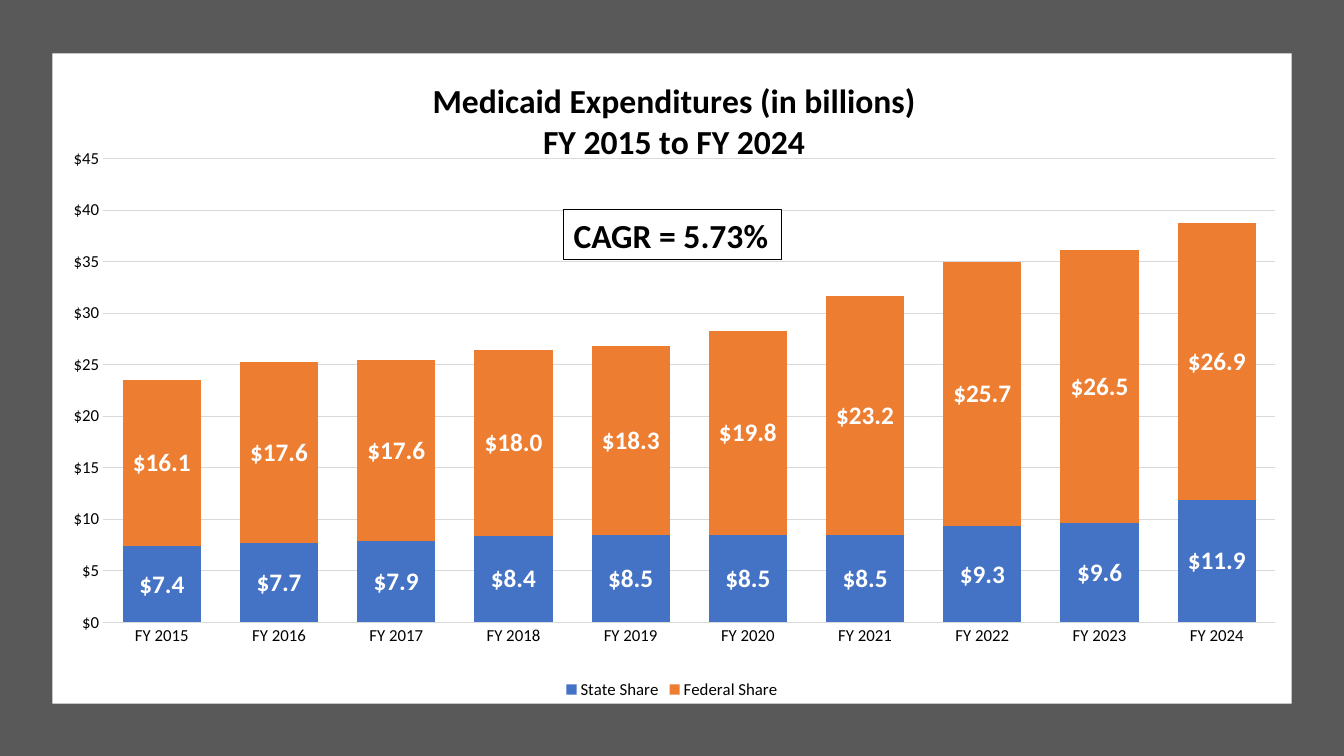
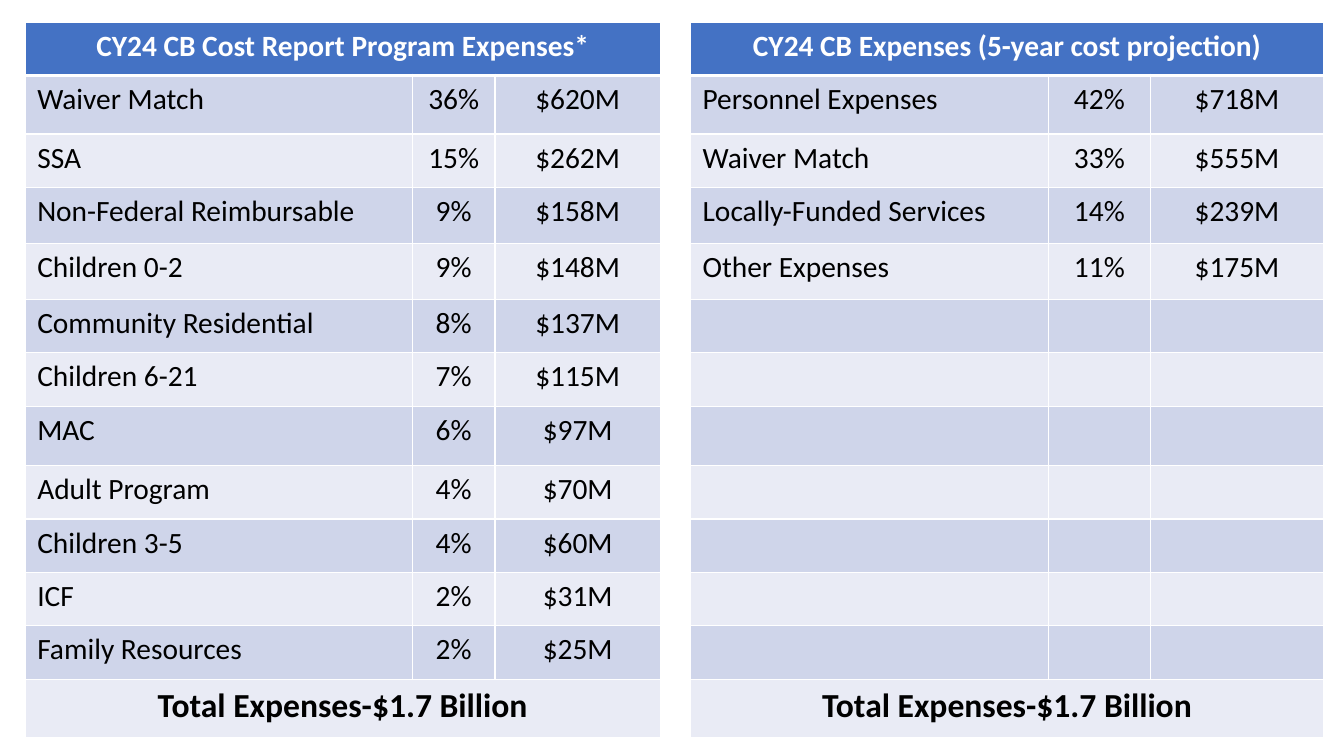
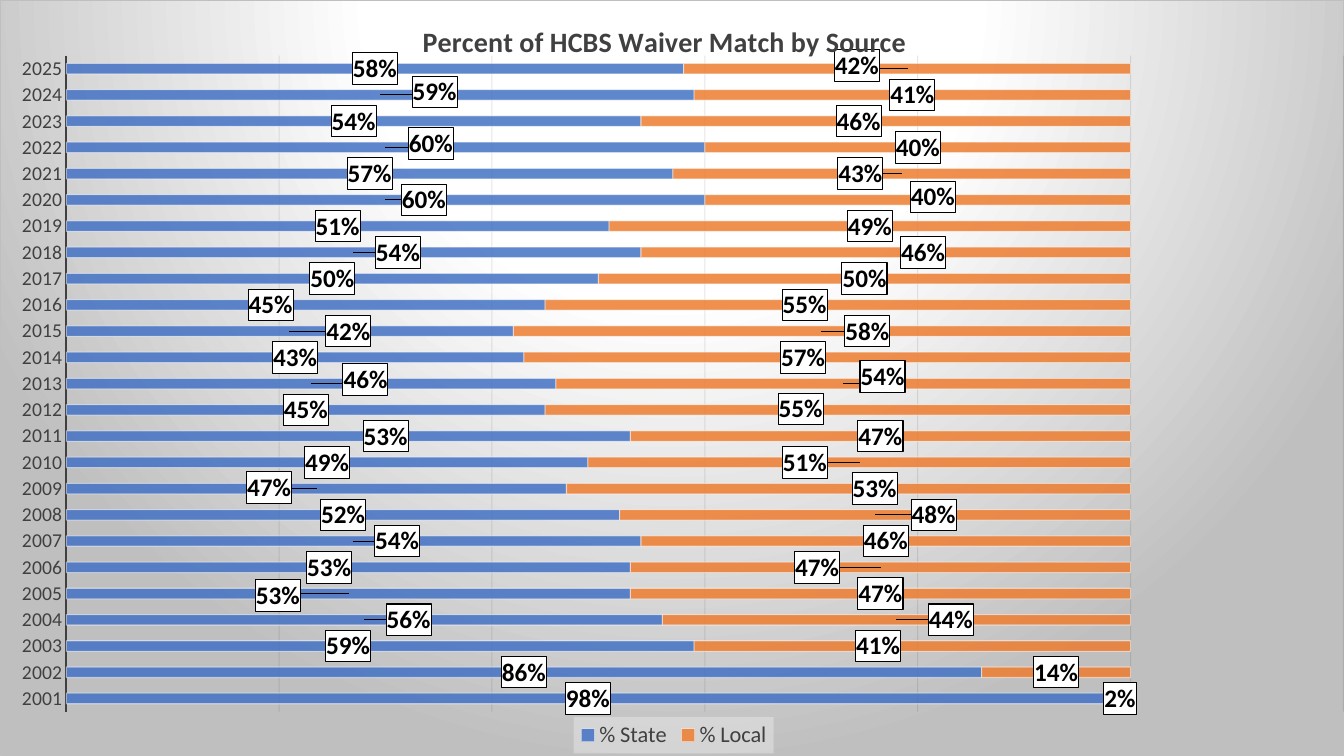
from copy import deepcopy
from itertools import zip_longest

from lxml import etree
from pptx import Presentation
from pptx import util as u
from pptx.chart.data import CategoryChartData
from pptx.dml.color import RGBColor
from pptx.enum import chart as ch, shapes, text
from pptx.oxml import parse_xml
from pptx.oxml.ns import nsdecls, qn

FONT = "Calibri"
W, H = 13.33, 7.5
C = {"state": "4472C4", "local": "ED7D31", "frame": "595959", "white": "FFFFFF",
     "black": "000000", "grid": "D9D9D9", "ink": "404040", "edge": "BFBFBF",
     "dark": "0D0D0D", "band1": "CFD5EA", "band2": "E9EBF5", "legend": "F2F2F2"}

NO_FILL = "<a:noFill/><a:ln><a:noFill/></a:ln>"
SPOTLIGHT = f"""<a:gradFill><a:gsLst>
<a:gs pos="0"><a:srgbClr val="{C['white']}"/></a:gs>
<a:gs pos="39000"><a:srgbClr val="{C['white']}"/></a:gs>
<a:gs pos="100000"><a:srgbClr val="{C['edge']}"/></a:gs></a:gsLst>
<a:path path="circle"><a:fillToRect l="50000" t="-80000" r="50000" b="180000"/></a:path></a:gradFill>
<a:ln w="9525"><a:solidFill><a:srgbClr val="{C['edge']}"/></a:solidFill></a:ln>"""
LABEL_BOX = f"""<a:solidFill><a:srgbClr val="{C['white']}"/></a:solidFill>
<a:ln w="9525"><a:solidFill><a:srgbClr val="{C['black']}"/></a:solidFill></a:ln>"""

YEARS = [f"FY {y}" for y in range(2015, 2025)]
SPENDING = {
    "State Share": [7.4, 7.7, 7.9, 8.4, 8.5, 8.5, 8.5, 9.3, 9.6, 11.9],
    "Federal Share": [16.1, 17.6, 17.6, 18, 18.3, 19.8, 23.2, 25.7, 26.5, 26.9]}

STATE_PCT = [98, 86, 59, 56, 53, 53, 54, 52, 47, 49, 53, 45, 46, 43, 42, 45, 50,
             54, 51, 60, 57, 60, 54, 59, 58]
MATCH = {"% State": [v / 100 for v in STATE_PCT],
         "% Local": [(100 - v) / 100 for v in STATE_PCT]}
LABEL_SHIFTS = [
    {2: (-.32, 0), 3: (.44, 0), 4: (-.7, .02), 5: (-.19, 0), 6: (.43, 0),
     8: (-.47, -.01), 10: (.37, 0), 12: (.54, -.04), 14: (.58, 0), 15: (-.35, 0),
     17: (.44, 0), 19: (.38, 0), 21: (.45, -.04), 23: (.54, -.03)},
    {2: (-.34, 0), 3: (.54, 0), 5: (-.63, 0), 7: (.58, 0), 8: (.26, 0),
     9: (-.54, 0), 11: (-.37, -.01), 12: (.39, -.07), 13: (-.24, 0), 14: (.45, 0),
     15: (-.33, 0), 17: (.37, 0), 19: (.15, -.03), 20: (-.41, 0), 22: (-.27, 0),
     24: (-.5, -.03)}]

PROGRAMS = [
    ("Waiver Match", "36%", "$620M"), ("SSA", "15%", "$262M"),
    ("Non-Federal Reimbursable", "9%", "$158M"), ("Children 0-2", "9%", "$148M"),
    ("Community Residential", "8%", "$137M"), ("Children 6-21", "7%", "$115M"),
    ("MAC", "6%", "$97M"), ("Adult Program", "4%", "$70M"),
    ("Children 3-5", "4%", "$60M"), ("ICF", "2%", "$31M"),
    ("Family Resources", "2%", "$25M")]
PROJECTION = [
    ("Personnel Expenses", "42%", "$718M"), ("Waiver Match", "33%", "$555M"),
    ("Locally-Funded Services", "14%", "$239M"), ("Other Expenses", "11%", "$175M")]
HEADS = ("CY24 CB Cost Report Program Expenses*", "CY24 CB Expenses (5-year cost projection)")
TOTAL = "Total Expenses-$1.7 Billion"
COLS = [3.84, .82, 1.64, .3, 3.55, 1.01, 1.72]
ROWS = [.53, .58, .53, .56, .55, .53, .53, .59, .53, .53, .53, .53, .58]


def rgb(name):
    return RGBColor.from_string(C[name])


def put(obj, **values):
    for name, value in values.items():
        setattr(obj, name, value)


def style(font, size, color="black", bold=False):
    put(font, name=FONT, size=u.Pt(size), bold=bold)
    font.color.rgb = rgb(color)


def stroke(line, color, width=.75):
    line.color.rgb = rgb(color)
    line.width = u.Pt(width)


def alpha(el, percent):
    for clr in el.iter(qn("a:srgbClr")):
        etree.SubElement(clr, qn("a:alpha")).set("val", str(percent * 1000))


def add_box(s, x, y, w, h, fill, line=None):
    sp = s.shapes.add_shape(shapes.MSO_SHAPE.RECTANGLE, *map(u.Inches, (x, y, w, h)))
    sp.shadow.inherit = False
    sp.fill.solid()
    sp.fill.fore_color.rgb = rgb(fill)
    if line:
        stroke(sp.line, line)
    else:
        sp.line.fill.background()
    return sp


def add_text(tf, words, size, color="black", bold=False, align=text.PP_ALIGN.LEFT):
    p = tf.paragraphs[0]
    p.alignment = align
    r = p.add_run()
    r.text = words
    style(r.font, size, color, bold)


def layout_xml(x, y, w=None, h=None, mode="edge"):
    items = {}
    if w:
        items["layoutTarget"] = "inner"
    if mode:
        items.update(xMode=mode, yMode=mode)
    items.update(x=x, y=y)
    if w:
        items.update(w=w, h=h)
    body = "".join(f'<c:{k} val="{v}"/>' for k, v in items.items())
    return parse_xml(f'<c:layout {nsdecls("c")}><c:manualLayout>{body}</c:manualLayout></c:layout>')


def set_layout(parent, layout):
    old = parent.find(qn("c:layout"))
    if old is not None:
        parent.remove(old)
    before = [e for e in parent if e.tag in (qn("c:tx"), qn("c:legendPos"))]
    if before:
        before[-1].addnext(layout)
    else:
        parent.insert(0, layout)


def sp_pr(body):
    return parse_xml(f'<c:spPr {nsdecls("c", "a")}>{body}</c:spPr>')


def add_stacked(s, kind, at, cats, data, gap, plot, background):
    cd = CategoryChartData()
    cd.categories = cats
    for name, values in data.items():
        cd.add_series(name, values)
    chart = s.shapes.add_chart(kind, *map(u.Inches, at), cd).chart
    style(chart.font, 10)
    chart._chartSpace.chart.addnext(sp_pr(background))
    put(chart.plots[0], gap_width=gap, overlap=100, vary_by_categories=False)
    set_layout(chart._chartSpace.chart.plotArea, layout_xml(*plot))
    for sr, color in zip(chart.series, ("state", "local")):
        sr.format.fill.solid()
        sr.format.fill.fore_color.rgb = rgb(color)
    return chart


def set_title(chart, lines, size, color, at, chart_size):
    chart.has_title = True
    tf = chart.chart_title.text_frame
    tf.text = "\n".join(lines)
    for p in tf.paragraphs:
        style(p.runs[0].font, size, color, True)
    x, y = (a / b for a, b in zip(at, chart_size))
    set_layout(chart.chart_title._element, layout_xml(x, y))


def set_legend(chart, size, color):
    chart.has_legend = True
    put(chart.legend, position=ch.XL_LEGEND_POSITION.BOTTOM, include_in_layout=False)
    style(chart.legend.font, size, color)
    return chart.legend._element


def set_axes(chart, top, step, grid, size, color, line, line_width):
    cat, val = chart.category_axis, chart.value_axis
    for axis in (cat, val):
        put(axis, major_tick_mark=ch.XL_TICK_MARK.NONE, minor_tick_mark=ch.XL_TICK_MARK.NONE)
        style(axis.tick_labels.font, size, color)
    stroke(cat.format.line, line, line_width)
    put(val, minimum_scale=0, maximum_scale=top, major_unit=step, has_major_gridlines=True)
    val.format.line.fill.background()
    stroke(val.major_gridlines.format.line, grid)
    return val


def set_labels(sr, fmt, color):
    dl = sr.data_labels
    put(dl, show_value=True, number_format=fmt, number_format_is_linked=False,
        position=ch.XL_LABEL_POSITION.CENTER)
    style(dl.font, 18, color, True)
    el = dl._element
    for leader in el.findall(qn("c:showLeaderLines")):
        el.remove(leader)
    return el


def shift_labels(el, shifts):
    shared = list(el)
    for pos, (idx, (dx, dy)) in enumerate(shifts.items()):
        lbl = etree.Element(qn("c:dLbl"))
        etree.SubElement(lbl, qn("c:idx")).set("val", str(idx))
        lbl.append(layout_xml(dx / W, dy / H, mode=None))
        lbl.extend(deepcopy(shared))
        el.insert(pos, lbl)


def set_cell(cell, fill, bottom=1):
    put(cell, margin_left=u.Inches(.12), margin_right=u.Inches(.12),
        margin_top=u.Inches(.06), margin_bottom=u.Inches(.06))
    cell.fill.solid()
    cell.fill.fore_color.rgb = rgb(fill)
    for i, side in enumerate("LRTB"):
        width = u.Pt(bottom if side == "B" else 1)
        cell._tc.tcPr.insert(i, parse_xml(
            f'<a:ln{side} {nsdecls("a")} w="{width}"><a:solidFill>'
            f'<a:srgbClr val="{C["white"]}"/></a:solidFill></a:ln{side}>'))


def spending_slide(s):
    area = (.52, .53, 12.29, 6.45)
    add_box(s, 0, 0, W, H, "frame")
    add_box(s, *area, "white")
    chart = add_stacked(s, ch.XL_CHART_TYPE.COLUMN_STACKED, area, YEARS, SPENDING, 50,
                        (.041, .162, .946, .713), NO_FILL)
    set_title(chart, ["Medicaid Expenditures (in billions)", "FY 2015 to FY 2024"],
              24, "black", (3.74, .23), area[2:])
    val = set_axes(chart, 45, 5, "grid", 12, "black", "grid", .75)
    put(val.tick_labels, number_format='"$"#,##0', number_format_is_linked=False)
    set_legend(chart, 12, "black")
    for sr in chart.series:
        set_labels(sr, '"$"#,##0.0', "white")
    sp = add_box(s, 5.59, 2.08, 2.16, .5, "white", "black")
    put(sp.text_frame, word_wrap=False, vertical_anchor=text.MSO_ANCHOR.MIDDLE)
    add_text(sp.text_frame, "CAGR = 5.73%", 24, bold=True)


def expenses_slide(s):
    at = map(u.Inches, (.25, .22, sum(COLS), sum(ROWS)))
    tbl = s.shapes.add_table(len(ROWS), len(COLS), *at).table
    for col, w in zip(tbl.columns, COLS):
        col.width = u.Inches(w)
    for row, h in zip(tbl.rows, ROWS):
        row.height = u.Inches(h)
    last = len(ROWS) - 1
    for i in range(len(ROWS)):
        band = "state" if i == 0 else "band1" if i % 2 else "band2"
        for j in range(len(COLS)):
            set_cell(tbl.cell(i, j), "white" if j == 3 else band, 1 if i else 3)
    center = text.PP_ALIGN.CENTER
    for left, head in zip((0, 4), HEADS):
        for i, words, size, color in ((0, head, 21, "white"), (last, TOTAL, 24, "black")):
            tbl.cell(i, left).merge(tbl.cell(i, left + 2))
            add_text(tbl.cell(i, left).text_frame, words, size, color, True, center)
    for i, (a, b) in enumerate(zip_longest(PROGRAMS, PROJECTION, fillvalue=()), 1):
        for left, entry in ((0, a), (4, b)):
            for j, words in enumerate(entry):
                add_text(tbl.cell(i, left + j).text_frame, words, 21,
                         align=center if j else text.PP_ALIGN.LEFT)


def match_slide(s):
    chart = add_stacked(s, ch.XL_CHART_TYPE.BAR_STACKED, (0, 0, W, H),
                        [str(y) for y in range(2001, 2026)], MATCH, 150,
                        (.049, .073, .951, .869), SPOTLIGHT)
    set_title(chart, ["Percent of HCBS Waiver Match by Source"], 20, "ink", (4.14, .16), (W, H))
    val = set_axes(chart, 1.2, .2, "dark", 14, "ink", "ink", 1.5)
    alpha(val.major_gridlines._xAx.find(qn("c:majorGridlines")), 10)
    val.visible = False
    legend = set_legend(chart, 16, "ink")
    set_layout(legend, layout_xml(5.69 / W, 7.12 / H))
    box = sp_pr(f'<a:solidFill><a:srgbClr val="{C["legend"]}"/></a:solidFill>')
    alpha(box, 39)
    legend.find(qn("c:txPr")).addprevious(box)
    for sr, shifts in zip(chart.series, LABEL_SHIFTS):
        stroke(sr.format.line, "white")
        look = sr._element.find(qn("c:spPr"))
        alpha(look.find(qn("a:solidFill")), 85)
        alpha(look.find(qn("a:ln")), 50)
        el = set_labels(sr, "0%", "black")
        el.find(qn("c:txPr")).addprevious(sp_pr(LABEL_BOX))
        shift_labels(el, shifts)


def main():
    prs = Presentation()
    put(prs, slide_width=u.Inches(W), slide_height=u.Inches(H))
    for build in (spending_slide, expenses_slide, match_slide):
        build(prs.slides.add_slide(prs.slide_layouts[6]))
    prs.save("out.pptx")


if __name__ == "__main__":
    main()
